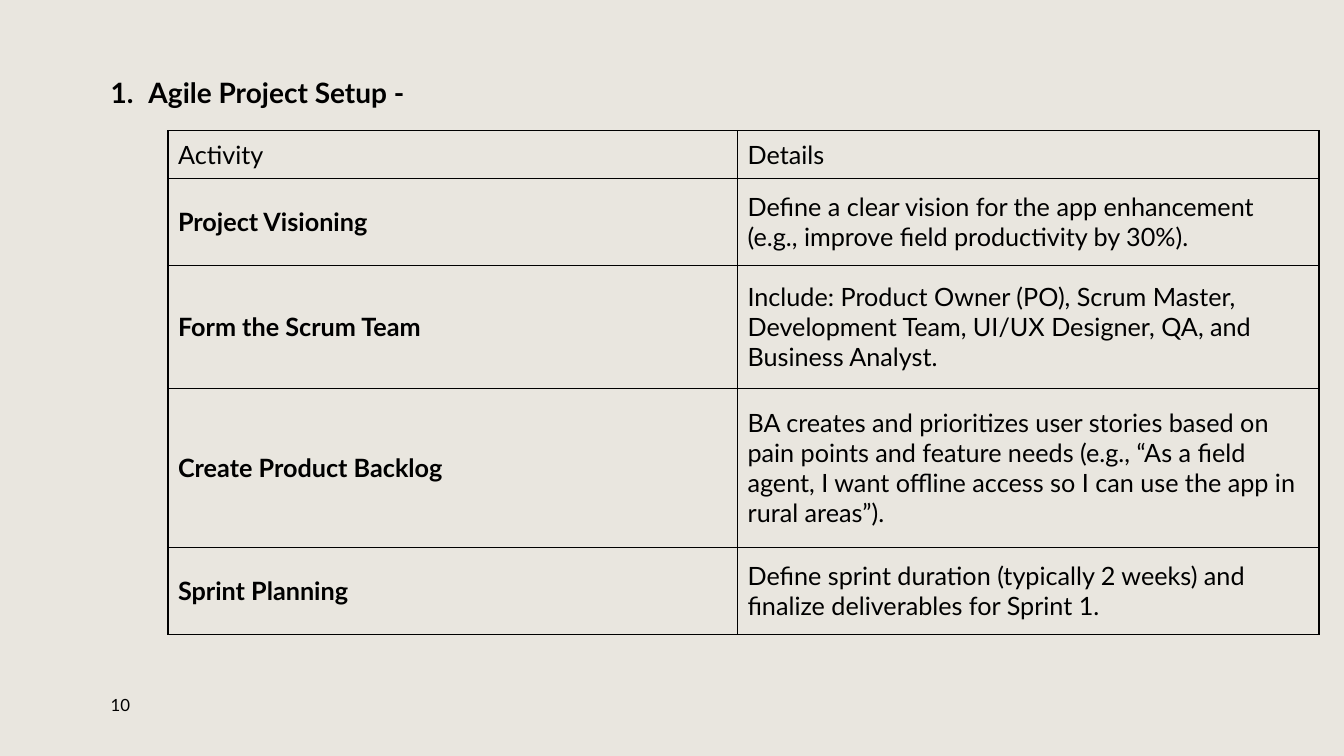
from pptx import Presentation
from pptx.dml.color import RGBColor
from pptx.enum.text import MSO_ANCHOR as Anchor
from pptx.oxml import parse_xml
from pptx.oxml.ns import nsdecls
from pptx.util import Pt

COLORS = {"background": "E9E6DF", "ink": "000000"}
FONT = "Lato"
COLUMN_WIDTHS = [406.8, 415.4]
ROW_HEIGHTS = [34, 62, 88, 113.6, 62]
ACTIVITIES = [
    ("Activity", "Details"),
    ("Project Visioning",
     "Define a clear vision for the app enhancement (e.g., improve field productivity by 30%)."),
    ("Form the Scrum Team",
     "Include: Product Owner (PO), Scrum Master, Development Team, UI/UX Designer, QA, "
     "and Business Analyst."),
    ("Create Product Backlog",
     "BA creates and prioritizes user stories based on pain points and feature needs "
     "(e.g., “As a field agent, I want offline access so I can use the app in rural areas”)."),
    ("Sprint Planning",
     "Define sprint duration (typically 2 weeks) and finalize deliverables for Sprint 1."),
]


def write_text(frame, text, size=18, bold=False, spacing=1.0):
    frame.word_wrap = True
    para = frame.paragraphs[0]
    para.line_spacing = spacing
    span = para.add_run()
    span.text = text
    span.font.name = FONT
    span.font.size = Pt(size)
    span.font.bold = bold
    span.font.color.rgb = RGBColor.from_string(COLORS["ink"])
    return para


def number_paragraph(para, indent):
    properties = para._p.get_or_add_pPr()
    properties.set("marL", str(Pt(indent)))
    properties.set("indent", str(-Pt(indent)))
    properties.append(parse_xml(
        f'<a:buFont {nsdecls("a")} typeface="{FONT}"/>'))
    properties.append(parse_xml(
        f'<a:buAutoNum {nsdecls("a")} type="arabicPeriod"/>'))


def add_heading(page, left, top, width, height):
    box = page.shapes.add_textbox(Pt(left), Pt(top), Pt(width), Pt(height))
    para = write_text(box.text_frame, "Agile Project Setup -", size=20, bold=True, spacing=0.9)
    number_paragraph(para, 27)


def add_page_number(page, left, top, width, height):
    box = page.shapes.add_textbox(Pt(left), Pt(top), Pt(width), Pt(height))
    box.text_frame.vertical_anchor = Anchor.MIDDLE
    write_text(box.text_frame, "10", size=12)


def add_borders(cell, width=1):
    properties = cell._tc.get_or_add_tcPr()
    for position, side in enumerate(("lnL", "lnR", "lnT", "lnB")):
        properties.insert(position, parse_xml(
            f'<a:{side} {nsdecls("a")} w="{Pt(width)}"><a:solidFill>'
            f'<a:srgbClr val="{COLORS["ink"]}"/></a:solidFill></a:{side}>'))


def add_activity_table(page, left, top):
    table = page.shapes.add_table(
        len(ACTIVITIES), len(COLUMN_WIDTHS), Pt(left), Pt(top),
        Pt(sum(COLUMN_WIDTHS)), Pt(sum(ROW_HEIGHTS))).table
    table.first_row = False
    table.horz_banding = False
    for column, width in zip(table.columns, COLUMN_WIDTHS):
        column.width = Pt(width)
    for row_index, (row, height) in enumerate(zip(table.rows, ROW_HEIGHTS)):
        row.height = Pt(height)
        for column_index, cell in enumerate(row.cells):
            cell.vertical_anchor = Anchor.MIDDLE
            cell.fill.background()
            add_borders(cell)
            write_text(cell.text_frame, ACTIVITIES[row_index][column_index],
                       bold=row_index > 0 and column_index == 0)


def build_setup_page(deck):
    page = deck.slides.add_slide(deck.slide_layouts[6])
    page.background.fill.solid()
    page.background.fill.fore_color.rgb = RGBColor.from_string(COLORS["background"])
    add_heading(page, 72, 53, 878, 30)
    add_page_number(page, 72, 492, 50, 23)
    add_activity_table(page, 120, 93.4)


def main():
    deck = Presentation()
    deck.slide_width, deck.slide_height = Pt(960), Pt(540)
    build_setup_page(deck)
    deck.save("out.pptx")


if __name__ == "__main__":
    main()
